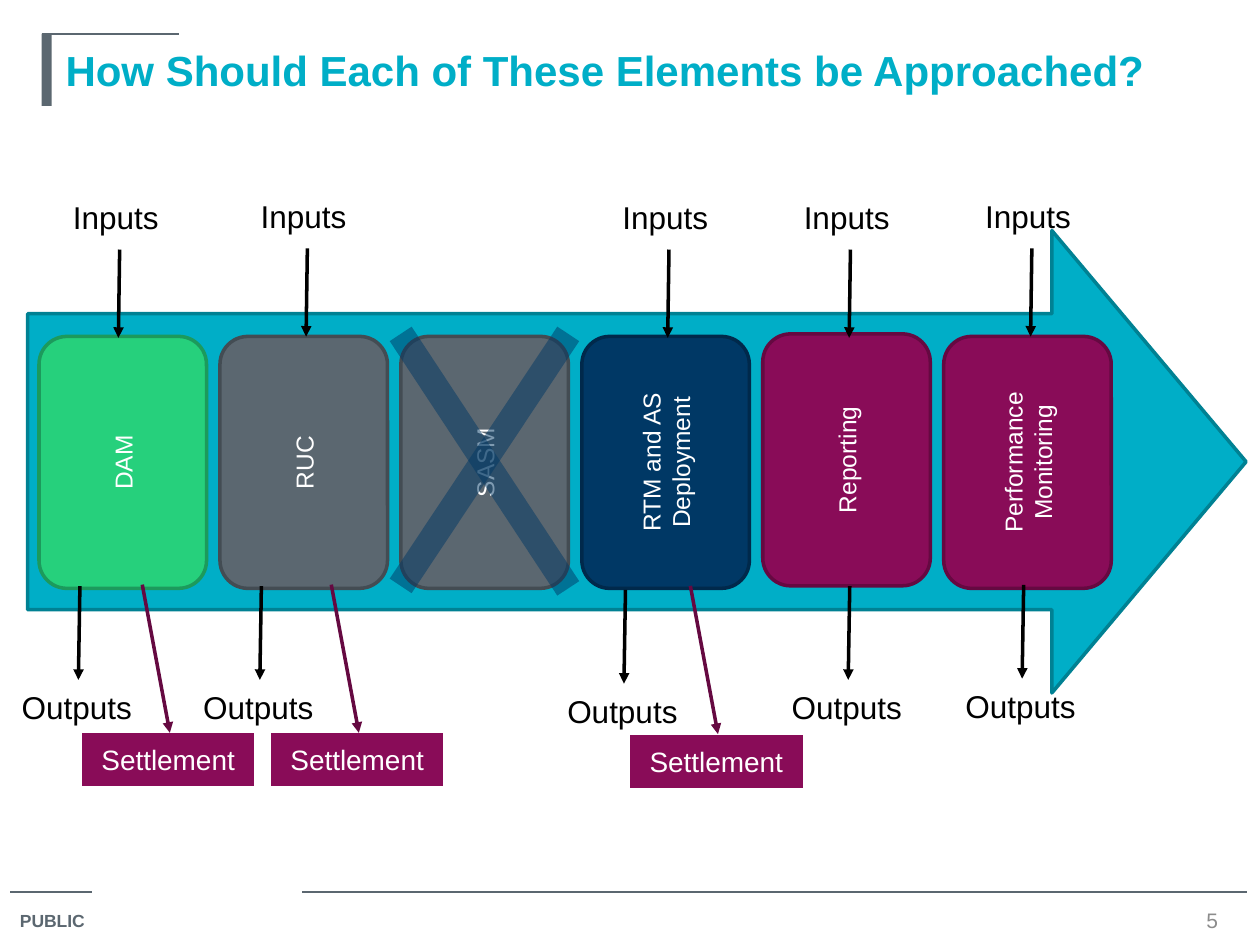
from lxml import etree
from pptx import Presentation
from pptx.dml.color import RGBColor
from pptx.enum.shapes import MSO_CONNECTOR, MSO_SHAPE as SHAPE
from pptx.enum.text import MSO_ANCHOR as ANCHOR, PP_ALIGN as ALIGN
from pptx.oxml.ns import qn
from pptx.util import Inches, Pt

COLORS = {
    "white": "FFFFFF", "black": "000000", "number": "8C8C8C",
    "teal": "00AEC7", "teal_edge": "008193",
    "green": "26D07C", "green_edge": "1C9A5C",
    "gray": "5B6770", "gray_edge": "434C53",
    "navy": "003865", "navy_edge": "00294B",
    "plum": "890C58", "plum_edge": "650941",
}
STAGES = [
    ("DAM", "green", 2.67), ("RUC", "gray", 2.67), ("SASM", "gray", 2.67),
    ("RTM and AS Deployment", "navy", 2.67), ("Reporting", "plum", 2.65),
    ("Performance Monitoring", "plum", 2.67),
]
INPUTS = [(0.42, 1.51, "white"), (1.91, 1.5, "white"), (4.78, 1.51, "white"),
          (6.22, 1.51, "white"), (7.66, 1.5, None)]
OUTPUTS = [(0, 5.4, "white"), (1.44, 5.4, "white"), (4.33, 5.43, "white"),
           (6.11, 5.4, "white"), (7.49, 5.39, None)]
SETTLEMENTS = [(0.65, 5.82), (2.15, 5.82), (5, 5.83)]
INPUT_ARROW = (1.12, 0.53, 2.79, 0.52)
OUTPUT_ARROW = (-0.01, 0.51, -1.78, 0.52)
SETTLEMENT_ARROW = (-0.01, 0.51, -2.81, 0.35)


def rgb(name):
    return RGBColor.from_string(COLORS[name])


def write(sp, text, size=18, color="black", bold=False, align=ALIGN.CENTER,
          anchor=ANCHOR.MIDDLE, vert=None):
    tf = sp.text_frame
    tf.word_wrap = True
    tf.vertical_anchor = anchor
    if vert:
        tf._txBody.bodyPr.set("vert", vert)
    p = tf.paragraphs[0]
    p.alignment = align
    r = p.add_run()
    r.text = text
    r.font.name, r.font.size, r.font.bold = "Arial", Pt(size), bold
    r.font.color.rgb = rgb(color)


class Deck:
    """Holds the presentation style and the current slide."""

    def __init__(self):
        self.prs = Presentation()
        self.prs.slide_width, self.prs.slide_height = Inches(10), Inches(7.5)
        self.slide = self.prs.slides.add_slide(self.prs.slide_layouts[5])

    def title(self, text, *box):
        sp = self.slide.shapes.title
        sp.left, sp.top, sp.width, sp.height = map(Inches, box)
        write(sp, text, size=24, color="teal", bold=True, align=ALIGN.LEFT)

    def text(self, text, *box, **fmt):
        write(self.slide.shapes.add_textbox(*map(Inches, box)), text, **fmt)

    def shape(self, kind, *box, fill=None, edge=None, adj=()):
        sp = self.slide.shapes.add_shape(kind, *map(Inches, box))
        sp.shadow.inherit = False
        if fill:
            sp.fill.solid()
            sp.fill.fore_color.rgb = rgb(fill)
        else:
            sp.fill.background()
        if edge:
            sp.line.color.rgb = rgb(edge)
            sp.line.width = Pt(2)
        else:
            sp.line.fill.background()
        for i, value in enumerate(adj):
            sp.adjustments[i] = value
        return sp

    def callout(self, text, *box, fill, edge, adj, end, **fmt):
        sp = self.shape(SHAPE.LINE_CALLOUT_1_NO_BORDER, *box,
                        fill=fill, edge=edge, adj=adj)
        etree.SubElement(sp.line._get_or_add_ln(), qn(end), type="triangle")
        write(sp, text, **fmt)

    def line(self, *ends, color="gray", width=0.75, alpha=None):
        cx = self.slide.shapes.add_connector(MSO_CONNECTOR.STRAIGHT, *map(Inches, ends))
        cx.line.color.rgb = rgb(color)
        cx.line.width = Pt(width)
        if alpha:
            clr = cx.line._get_or_add_ln().find(".//" + qn("a:srgbClr"))
            etree.SubElement(clr, qn("a:alpha"), val=str(alpha * 1000))
        etree.SubElement(cx._element.spPr, qn("a:effectLst"))


def main():
    deck = Deck()
    deck.line(0.08, 7.08, 0.73, 7.08)
    deck.line(2.4, 7.08, 9.9, 7.08)
    deck.text("PUBLIC", 0.06, 7.17, 0.77, 0.28, size=10, color="gray", bold=True,
              align=ALIGN.LEFT, anchor=ANCHOR.TOP)
    deck.shape(SHAPE.RECTANGLE, 0.33, 0.27, 0.08, 0.57, fill="gray")
    deck.line(0.33, 0.27, 1.42, 0.27)
    deck.title("How Should Each of These Elements be Approached?", 0.42, 0.27, 9.25, 0.57)
    deck.text("5", 9.33, 7.18, 0.58, 0.24, size=12, color="number")

    deck.shape(SHAPE.RIGHT_ARROW, 0.22, 1.83, 9.67, 3.67, fill="teal",
               edge="teal_edge", adj=(0.64, 0.42))
    pitch = (7.49 - 0.31) / (len(STAGES) - 1)
    for i, (name, color, top) in enumerate(STAGES):
        sp = deck.shape(SHAPE.ROUNDED_RECTANGLE, 0.31 + i * pitch, top, 1.33, 2,
                        fill=color, edge=color + "_edge")
        write(sp, name, size=14, color="white", vert="vert270")

    for left, top, fill in INPUTS:
        deck.callout("Inputs", left, top, 1, 0.42, fill=fill, edge="black",
                     adj=INPUT_ARROW, end="a:tailEnd")
    for left, top, fill in OUTPUTS:
        deck.callout("Outputs", left, top, 1.22, 0.42, fill=fill, edge="black",
                     adj=OUTPUT_ARROW, end="a:headEnd")
    for left, top in SETTLEMENTS:
        deck.callout("Settlement", left, top, 1.37, 0.42, fill="plum", edge="plum_edge",
                     adj=SETTLEMENT_ARROW, end="a:headEnd", size=16, color="white")

    deck.line(4.51, 2.65, 3.18, 4.65, color="navy", width=15, alpha=50)
    deck.line(3.18, 2.65, 4.51, 4.67, color="navy", width=15, alpha=50)
    deck.prs.save("out.pptx")


if __name__ == "__main__":
    main()
